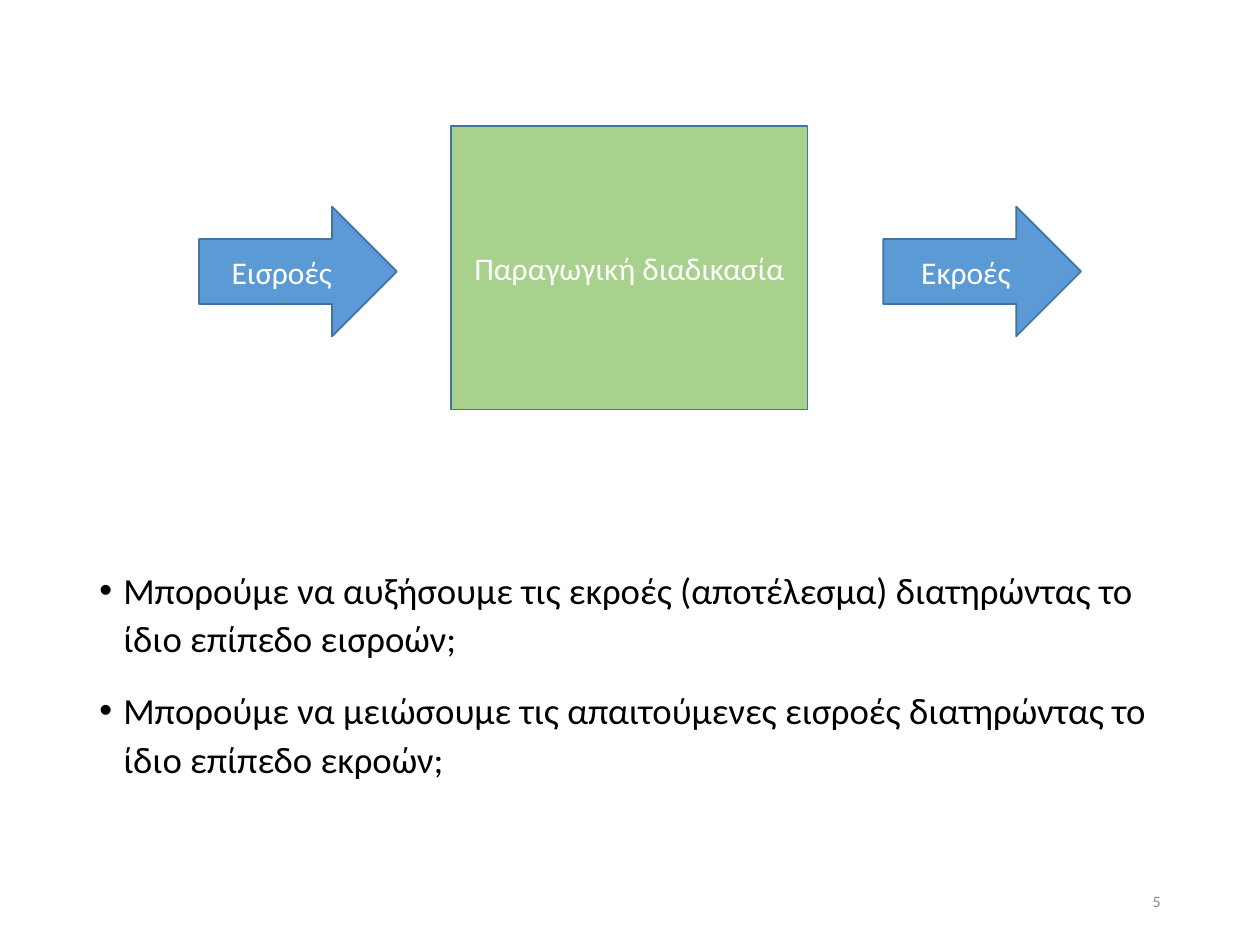
from lxml.etree import SubElement
from pptx import Presentation
from pptx.dml.color import RGBColor
from pptx.enum.shapes import MSO_SHAPE
from pptx.enum.text import MSO_ANCHOR, PP_ALIGN
from pptx.oxml.ns import qn
from pptx.util import Inches, Pt

COLOURS = {
    "arrow": "5B9BD5",
    "process": "A9D18E",
    "outline": "43739E",
    "label": "FFFFFF",
    "body": "000000",
    "number": "8C8C8C",
}


class SlideBuilder:
    """Holds the style and the current page; lengths are in grid units."""

    font = "Calibri"
    unit = Inches(0.01)  # grid of 1000 columns by 750 rows

    def __init__(self, deck):
        self.page = deck.slides.add_slide(deck.slide_layouts[6])

    def place(self, *cells):
        return [round(cell * self.unit) for cell in cells]

    def add_text(self, para, text, size, colour, **formats):
        for name, value in formats.items():
            setattr(para, name, value)
        span = para.add_run()
        span.text = text
        for name, value in {"name": self.font, "size": Pt(size)}.items():
            setattr(span.font, name, value)
        span.font.color.rgb = RGBColor.from_string(COLOURS[colour])

    def shape(self, kind, cells, fill, text):
        box = self.page.shapes.add_shape(kind, *self.place(*cells))
        box.shadow.inherit = False
        box.fill.solid()
        box.fill.fore_color.rgb = RGBColor.from_string(COLOURS[fill])
        box.line.color.rgb = RGBColor.from_string(COLOURS["outline"])
        box.line.width = Pt(1)
        box.text_frame.vertical_anchor = MSO_ANCHOR.MIDDLE
        self.add_text(box.text_frame.paragraphs[0], text, 18, "label",
                      alignment=PP_ALIGN.CENTER)

    def text_box(self, cells, anchor):
        frame = self.page.shapes.add_textbox(*self.place(*cells)).text_frame
        frame.word_wrap = True
        frame.vertical_anchor = anchor
        return frame

    def bullets(self, cells, items):
        frame = self.text_box(cells, MSO_ANCHOR.TOP)
        indent = Inches(0.19)
        for index, item in enumerate(items):
            para = frame.add_paragraph() if index else frame.paragraphs[0]
            self.add_text(para, item, 21, "body", line_spacing=1.1,
                          space_before=Pt(7.5), space_after=Pt(6))
            # Hanging bullet
            properties = para._p.get_or_add_pPr()
            properties.set("marL", str(indent))
            properties.set("indent", str(-indent))
            SubElement(properties, qn("a:buFont"), typeface="Arial")
            SubElement(properties, qn("a:buChar"), char="•")

    def page_number(self, cells, number):
        frame = self.text_box(cells, MSO_ANCHOR.MIDDLE)
        self.add_text(frame.paragraphs[0], number, 9, "number",
                      alignment=PP_ALIGN.RIGHT)


def main():
    deck = Presentation()
    deck.slide_width, deck.slide_height = Inches(10), Inches(7.5)
    builder = SlideBuilder(deck)

    # Questions
    builder.bullets((69, 442, 862, 234), [
        "Μπορούμε να αυξήσουμε τις εκροές (αποτέλεσμα) διατηρώντας το ίδιο επίπεδο εισροών;",
        "Μπορούμε να μειώσουμε τις απαιτούμενες εισροές διατηρώντας το ίδιο επίπεδο εκροών;",
    ])
    builder.page_number((706, 695, 225, 40), "5")

    # Inputs, process, outputs
    builder.shape(MSO_SHAPE.RECTANGLE, (358, 100, 283, 225), "process",
                  "Παραγωγική διαδικασία")
    for left, label in ((158, "Εισροές"), (701, "Εκροές")):
        builder.shape(MSO_SHAPE.RIGHT_ARROW, (left, 164, 157, 103), "arrow", label)

    deck.save("out.pptx")


if __name__ == "__main__":
    main()
